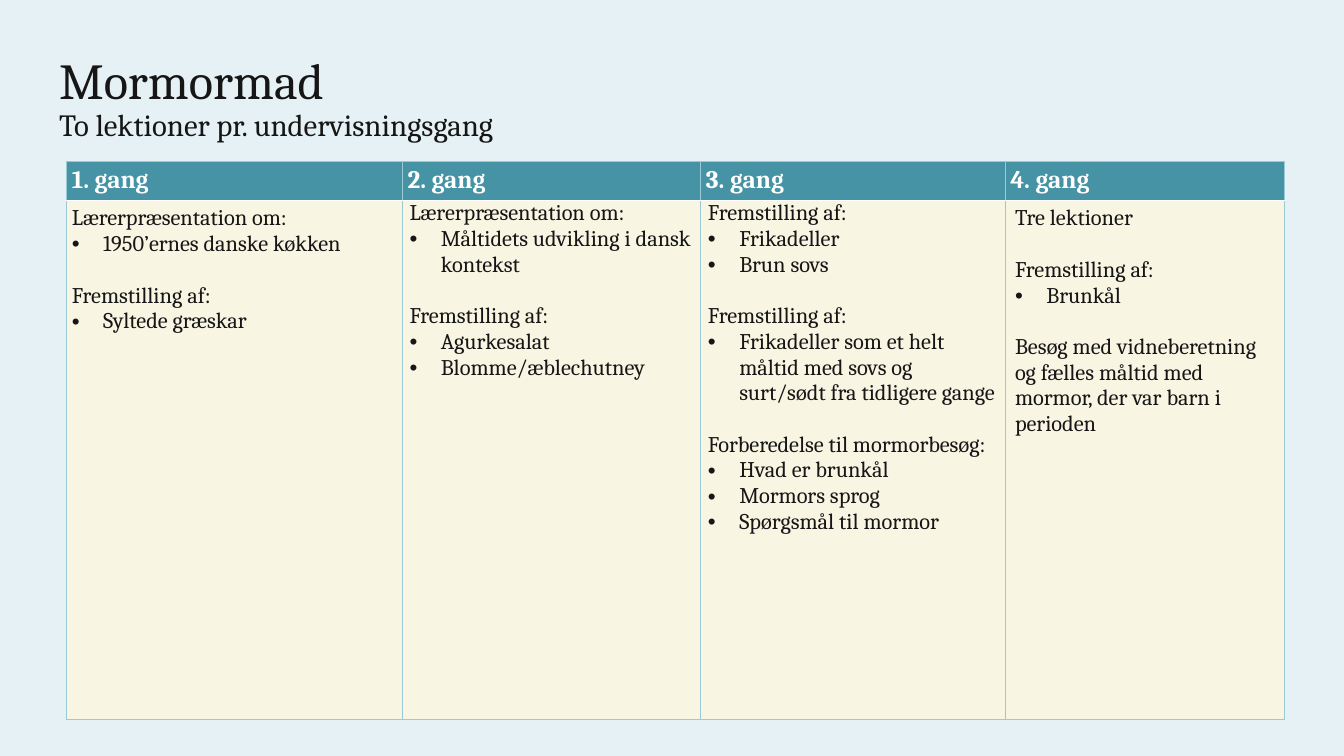
import dataclasses
import typing

import lxml.etree
import pptx
import pptx.dml.color
import pptx.enum.text
import pptx.oxml.ns
import pptx.util

Cm = pptx.util.Cm
Pt = pptx.util.Pt
qn = pptx.oxml.ns.qn

FACE = "Cambria"
INK, PAGE, HEAD, BODY, EDGE, WHITE = (
    "161616", "E5F1F4", "4693A6", "F9F5E3", "99CAD6", "FFFFFF")
GAP = Pt(18.4)
HANG = Cm(0.79)


@dataclasses.dataclass
class Group:
    lead: str
    items: tuple[str, ...] = ()


@dataclasses.dataclass
class Lesson:
    title: str
    width: float
    side: float
    top: float
    groups: tuple[Group, ...]


LESSONS = (
    Lesson("1. gang", 8.46, 0.13, 0.13, (
        Group("Lærerpræsentation om:", ("1950’ernes danske køkken",)),
        Group("Fremstilling af:", ("Syltede græskar",)),
    )),
    Lesson("2. gang", 7.52, 0.18, 0, (
        Group("Lærerpræsentation om:", ("Måltidets udvikling i dansk kontekst",)),
        Group("Fremstilling af:", ("Agurkesalat", "Blomme/æblechutney")),
    )),
    Lesson("3. gang", 7.67, 0.18, 0, (
        Group("Fremstilling af:", ("Frikadeller", "Brun sovs")),
        Group("Fremstilling af:", (
            "Frikadeller som et helt måltid med sovs og "
            "surt/sødt fra tidligere gange",)),
        Group("Forberedelse til mormorbesøg:", (
            "Hvad er brunkål", "Mormors sprog", "Spørgsmål til mormor")),
    )),
    Lesson("4. gang", 7.04, 0.25, 0.13, (
        Group("Tre lektioner"),
        Group("Fremstilling af:", ("Brunkål",)),
        Group("Besøg med vidneberetning og fælles måltid med mormor, "
              "der var barn i perioden"),
    )),
)


def tint(code: str) -> pptx.dml.color.RGBColor:
    return pptx.dml.color.RGBColor.from_string(code)


def apply(target: typing.Any, values: dict[str, typing.Any]) -> None:
    for name, value in values.items():
        setattr(target, name, value)


def write(frame: typing.Any, text: str, size: float, color: str = INK,
          bold: bool = False, bullet: bool = False,
          **layout: typing.Any) -> None:
    """Fill the first empty paragraph of the frame, or add one."""
    para = frame.paragraphs[0] if not frame.text else frame.add_paragraph()
    apply(para, layout)
    if bullet:
        props = para._p.get_or_add_pPr()
        props.set("marL", str(HANG))
        props.set("indent", str(-HANG))
        lxml.etree.SubElement(props, qn("a:buFont"), typeface="Arial")
        lxml.etree.SubElement(props, qn("a:buChar"), char="•")
    run = para.add_run()
    run.text = text
    apply(run.font, {"name": FACE, "size": Pt(size), "bold": bold})
    run.font.color.rgb = tint(color)


def style(cell: typing.Any, fill: str, side: float, top: float,
          edges: dict[str, tuple[str, float]]) -> None:
    """Set the margins, fill and borders of a cell."""
    apply(cell, {"margin_left": Cm(side), "margin_right": Cm(side),
                 "margin_top": Cm(top), "margin_bottom": Cm(top)})
    cell.fill.solid()
    cell.fill.fore_color.rgb = tint(fill)
    props = cell._tc.get_or_add_tcPr()
    for place, tag in enumerate(("lnL", "lnR", "lnT", "lnB")):
        color, width = edges.get(tag, (EDGE, 0.5))
        line = lxml.etree.Element(qn(f"a:{tag}"), w=str(Pt(width)))
        solid = lxml.etree.SubElement(line, qn("a:solidFill"))
        lxml.etree.SubElement(solid, qn("a:srgbClr"), val=color)
        props.insert(place, line)


def add_title(slide: typing.Any) -> None:
    box = slide.shapes.add_textbox(Cm(1.24), Cm(0.69), Cm(19.51), Cm(3.63))
    frame = box.text_frame
    apply(frame, {"word_wrap": True,
                  "vertical_anchor": pptx.enum.text.MSO_ANCHOR.MIDDLE})
    write(frame, "Mormormad", 36, line_spacing=0.9)
    write(frame, "To lektioner pr. undervisningsgang", 22, line_spacing=0.9)


def add_plan(slide: typing.Any) -> None:
    width = sum(lesson.width for lesson in LESSONS)
    table = slide.shapes.add_table(
        2, len(LESSONS), Cm(1.68), Cm(4.06), Cm(width), Cm(14.07)).table
    table.horz_banding = False
    for row, height in zip(table.rows, (0.99, 13.08)):
        row.height = Cm(height)
    rule = (WHITE, 1)
    for col, lesson in enumerate(LESSONS):
        table.columns[col].width = Cm(lesson.width)
        head, body = table.cell(0, col), table.cell(1, col)
        style(head, HEAD, 0.13, 0.13, {"lnB": rule})
        write(head.text_frame, lesson.title, 18, WHITE, bold=True)
        style(body, BODY, lesson.side, lesson.top, {"lnT": rule})
        for place, group in enumerate(lesson.groups):
            gap = {"space_before": GAP} if place else {}
            write(body.text_frame, group.lead, 16, **gap)
            for item in group.items:
                write(body.text_frame, item, 16, bullet=True)


def main() -> None:
    deck = pptx.Presentation()
    apply(deck, {"slide_width": Cm(33.87), "slide_height": Cm(19.05)})
    slide = deck.slides.add_slide(deck.slide_layouts[6])
    slide.background.fill.solid()
    slide.background.fill.fore_color.rgb = tint(PAGE)
    add_plan(slide)
    add_title(slide)
    deck.save("out.pptx")


if __name__ == "__main__":
    main()
